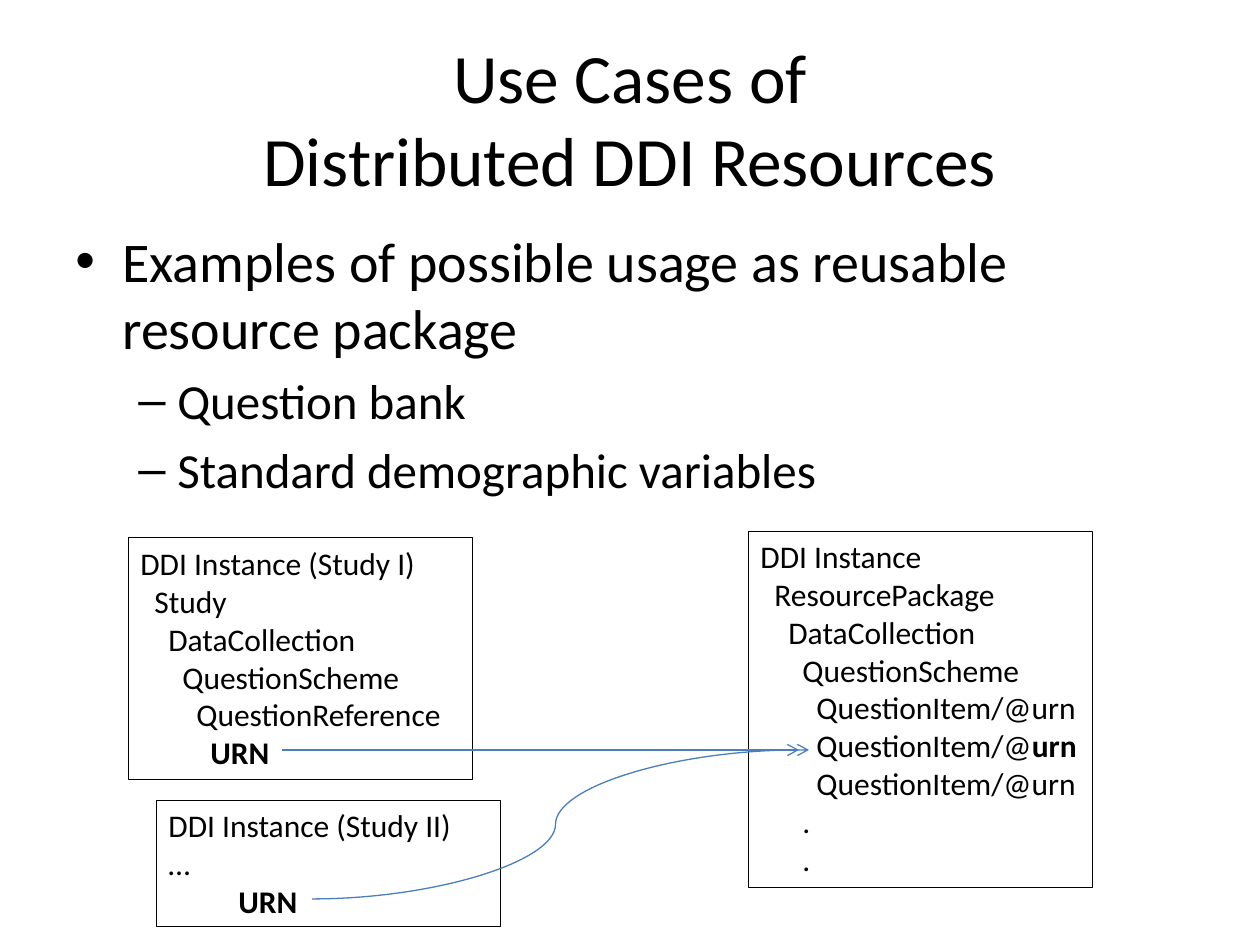
from dataclasses import dataclass

import pptx
import pptx.dml.color
import pptx.enum.shapes
import pptx.enum.text
import pptx.oxml.ns
import pptx.util
from lxml import etree

PX_PER_INCH = 126
FONT = "Calibri"
COLORS = {"text": "000000", "border": "000000", "reference": "4B7EBC"}
NEST_STEP = 14  # indent of one nesting level in the instance boxes


@dataclass
class Bullet:
    text: str
    mark: str
    size: int
    margin: int
    hang: int


@dataclass
class Element:
    """One line of an instance box, with an optional bold ending."""
    depth: int
    plain: str
    bold: str = ""


@dataclass
class Instance:
    left: int
    top: int
    width: int
    height: int
    elements: list[Element]


@dataclass
class Reference:
    start: tuple[int, int]
    end: tuple[int, int]


BULLETS = [
    Bullet("Examples of possible usage as reusable resource package", "•", 32, 47, 47),
    Bullet("Question bank", "–", 28, 102, 39),
    Bullet("Standard demographic variables", "–", 28, 102, 39),
]

INSTANCES = [
    Instance(128, 538, 344, 242, [
        Element(0, "DDI Instance (Study I)"),
        Element(1, "Study"),
        Element(2, "DataCollection"),
        Element(3, "QuestionScheme"),
        Element(4, "QuestionReference"),
        Element(5, "", "URN"),
    ]),
    Instance(748, 531, 344, 356, [
        Element(0, "DDI Instance"),
        Element(1, "ResourcePackage"),
        Element(2, "DataCollection"),
        Element(3, "QuestionScheme"),
        Element(4, "QuestionItem/@urn"),
        Element(4, "QuestionItem/@", "urn"),
        Element(4, "QuestionItem/@urn"),
        Element(3, "."),
        Element(3, "."),
    ]),
    Instance(156, 800, 344, 127, [
        Element(0, "DDI Instance (Study II)"),
        Element(0, "…"),
        Element(5, "", "URN"),
    ]),
]

REFERENCES = [
    Reference((282, 750), (809, 750)),
    Reference((312, 899), (799, 750)),
]


def px(length: int) -> int:
    return round(length * pptx.util.Inches(1) / PX_PER_INCH)


def rgb(name: str) -> pptx.dml.color.RGBColor:
    return pptx.dml.color.RGBColor.from_string(COLORS[name])


def format_runs(paragraph, size: float) -> None:
    for run in paragraph.runs:
        run.font.name = FONT
        run.font.size = pptx.util.Pt(size)
        run.font.color.rgb = rgb("text")


def add_title(slide) -> None:
    title = slide.shapes.add_textbox(px(63), px(38), px(1134), px(158))
    frame = title.text_frame
    frame.word_wrap = True
    frame.vertical_anchor = pptx.enum.text.MSO_ANCHOR.MIDDLE
    heading = frame.paragraphs[0]
    heading.text = "Use Cases of\vDistributed DDI Resources"
    heading.alignment = pptx.enum.text.PP_ALIGN.CENTER
    format_runs(heading, 39.6)


def add_bullets(slide, bullets: list[Bullet]) -> None:
    body = slide.shapes.add_textbox(px(63), px(220), px(1134), px(311))
    frame = body.text_frame
    frame.word_wrap = True
    frame.text = "\n".join(bullet.text for bullet in bullets)
    for paragraph, bullet in zip(frame.paragraphs, bullets):
        format_runs(paragraph, bullet.size)
        paragraph.space_before = pptx.util.Pt(bullet.size * 0.2)
        properties = paragraph._p.get_or_add_pPr()
        properties.set("marL", str(px(bullet.margin)))
        properties.set("indent", str(-px(bullet.hang)))
        font = etree.SubElement(properties, pptx.oxml.ns.qn("a:buFont"))
        font.set("typeface", "Arial")
        mark = etree.SubElement(properties, pptx.oxml.ns.qn("a:buChar"))
        mark.set("char", bullet.mark)


def add_instance(slide, instance: Instance) -> None:
    box = slide.shapes.add_shape(
        pptx.enum.shapes.MSO_SHAPE.RECTANGLE,
        px(instance.left), px(instance.top), px(instance.width), px(instance.height))
    box.shadow.inherit = False
    box.fill.background()
    box.line.color.rgb = rgb("border")
    box.line.width = pptx.util.Pt(0.5)
    frame = box.text_frame
    frame.word_wrap = True
    frame.auto_size = pptx.enum.text.MSO_AUTO_SIZE.SHAPE_TO_FIT_TEXT
    frame.vertical_anchor = pptx.enum.text.MSO_ANCHOR.TOP
    frame.text = "\n".join(element.plain for element in instance.elements)
    for paragraph, element in zip(frame.paragraphs, instance.elements):
        paragraph.alignment = pptx.enum.text.PP_ALIGN.LEFT
        paragraph._p.get_or_add_pPr().set("marL", str(px(element.depth * NEST_STEP)))
        if element.bold:
            ending = paragraph.add_run()
            ending.text = element.bold
            ending.font.bold = True
        format_runs(paragraph, 18)


def add_reference(slide, reference: Reference) -> None:
    curve = slide.shapes.add_connector(
        pptx.enum.shapes.MSO_CONNECTOR.CURVE,
        *map(px, reference.start), *map(px, reference.end))
    curve.line.color.rgb = rgb("reference")
    curve.line.width = pptx.util.Pt(0.75)
    arrowhead = etree.SubElement(curve.line._get_or_add_ln(), pptx.oxml.ns.qn("a:tailEnd"))
    arrowhead.set("type", "arrow")
    etree.SubElement(curve._element.spPr, pptx.oxml.ns.qn("a:effectLst"))


def main() -> None:
    presentation = pptx.Presentation()
    presentation.slide_width = pptx.util.Inches(10)
    presentation.slide_height = pptx.util.Inches(7.5)
    slide = presentation.slides.add_slide(presentation.slide_layouts[6])

    # Heading and bullet list
    add_title(slide)
    add_bullets(slide, BULLETS)

    # Instance boxes and the URN references between them
    for instance in INSTANCES:
        add_instance(slide, instance)
    for reference in REFERENCES:
        add_reference(slide, reference)

    presentation.save("out.pptx")


if __name__ == "__main__":
    main()
